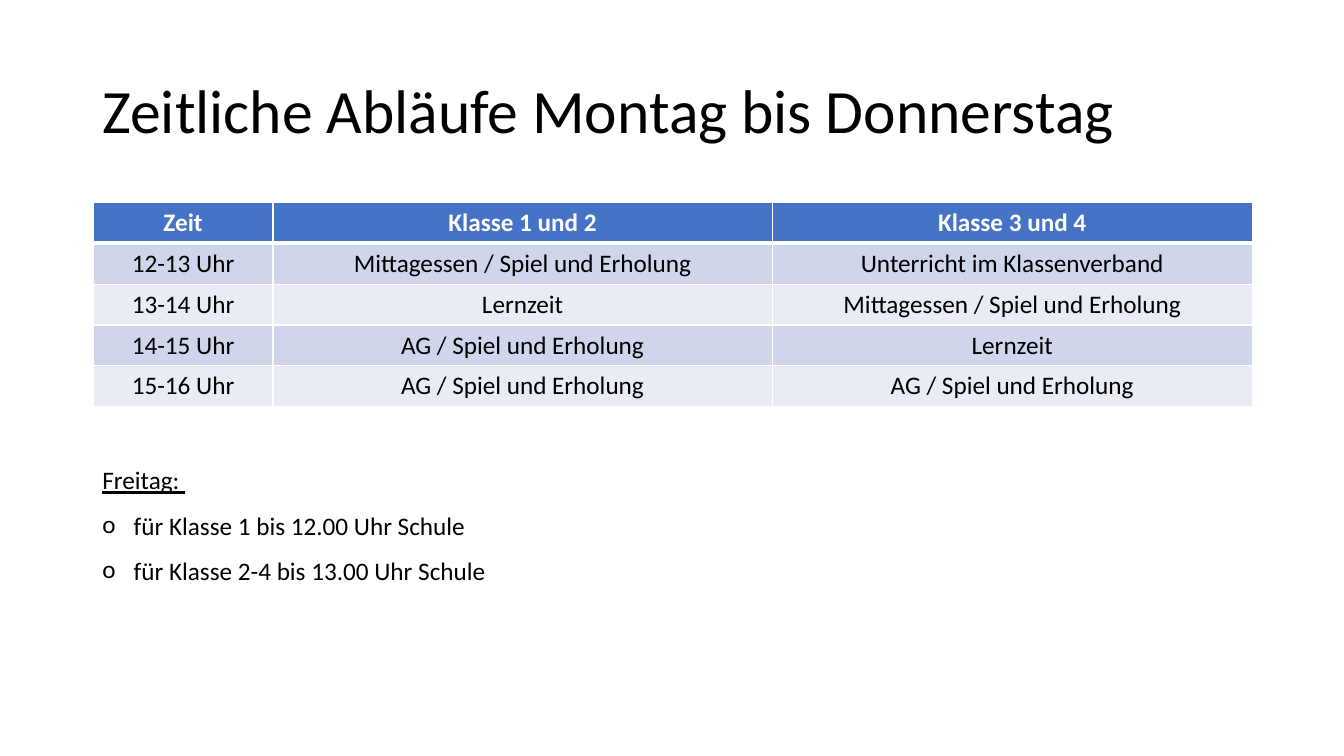
import pptx
import pptx.util
import pptx.dml.color
import pptx.enum.text
import pptx.oxml
import pptx.oxml.ns
from lxml import etree

Cm = pptx.util.Cm
Pt = pptx.util.Pt
ALIGN = pptx.enum.text.PP_ALIGN
ANCHOR = pptx.enum.text.MSO_ANCHOR

theme = {
    "font": "Calibri",
    "title_size": 44,
    "body_size": 18,
    "text": "000000",
    "header_text": "FFFFFF",
    "header_fill": "4472C4",
    "bands": ["CFD5EA", "E9EBF5"],
    "border": "FFFFFF",
}


def write(para, text, size, color, **formats):
    span = para.add_run()
    span.text = text
    span.font.color.rgb = pptx.dml.color.RGBColor.from_string(color)
    values = {"name": theme["font"], "size": Pt(size), **formats}
    for name, value in values.items():
        setattr(span.font, name, value)


def add_box(page, left, top, width, height, anchor):
    box = page.shapes.add_textbox(Cm(left), Cm(top), Cm(width), Cm(height))
    box.text_frame.word_wrap = True
    box.text_frame.vertical_anchor = anchor
    return box.text_frame


deck = pptx.Presentation()
deck.slide_width = Cm(33.87)
deck.slide_height = Cm(19.05)
page = deck.slides.add_slide(deck.slide_layouts[6])

title = add_box(page, 2.33, 1.01, 29.21, 3.68, ANCHOR.MIDDLE)
title.paragraphs[0].line_spacing = 0.9
write(title.paragraphs[0], "Zeitliche Abläufe Montag bis Donnerstag",
      theme["title_size"], theme["text"])

schedule = [
    ["Zeit", "Klasse 1 und 2", "Klasse 3 und 4"],
    ["12-13 Uhr", "Mittagessen / Spiel und Erholung", "Unterricht im Klassenverband"],
    ["13-14 Uhr", "Lernzeit", "Mittagessen / Spiel und Erholung"],
    ["14-15 Uhr", "AG / Spiel und Erholung", "Lernzeit"],
    ["15-16 Uhr", "AG / Spiel und Erholung", "AG / Spiel und Erholung"],
]
column_widths = [4.53, 12.58, 12.1]
row_height = 1.03

table = page.shapes.add_table(
    len(schedule), len(column_widths), Cm(2.35), Cm(5.1),
    Cm(sum(column_widths)), Cm(row_height * len(schedule))).table
for column, width in zip(table.columns, column_widths):
    column.width = Cm(width)

for row_index, texts in enumerate(schedule):
    table.rows[row_index].height = Cm(row_height)
    header = row_index == 0
    fill = theme["header_fill"] if header else theme["bands"][(row_index - 1) % 2]
    color = theme["header_text"] if header else theme["text"]
    for column_index, text in enumerate(texts):
        cell = table.cell(row_index, column_index)
        properties = cell._tc.get_or_add_tcPr()
        for side in "LRTB":
            thick = (header and side == "B") or (row_index == 1 and side == "T")
            line = etree.SubElement(properties, pptx.oxml.ns.qn(f"a:ln{side}"),
                                    w=str(Pt(3 if thick else 1)))
            solid = etree.SubElement(line, pptx.oxml.ns.qn("a:solidFill"))
            etree.SubElement(solid, pptx.oxml.ns.qn("a:srgbClr"), val=theme["border"])
        cell.fill.solid()
        cell.fill.fore_color.rgb = pptx.dml.color.RGBColor.from_string(fill)
        para = cell.text_frame.paragraphs[0]
        para.alignment = ALIGN.CENTER
        write(para, text, theme["body_size"], color, bold=header)

friday = add_box(page, 2.33, 11.2, 14.38, 4.5, ANCHOR.TOP)
friday.paragraphs[0].line_spacing = 1.5
write(friday.paragraphs[0], "Freitag: ", theme["body_size"], theme["text"], underline=True)
for text in ["für Klasse 1 bis 12.00 Uhr Schule", "für Klasse 2-4 bis 13.00 Uhr Schule"]:
    para = friday.add_paragraph()
    para.line_spacing = 1.5
    properties = para._p.get_or_add_pPr()
    indent = Cm(0.79)
    properties.set("marL", str(indent))
    properties.set("indent", str(-indent))
    etree.SubElement(properties, pptx.oxml.ns.qn("a:buFont"), typeface=theme["font"])
    etree.SubElement(properties, pptx.oxml.ns.qn("a:buChar"), char="o")
    write(para, text, theme["body_size"], theme["text"])

deck.save("out.pptx")
